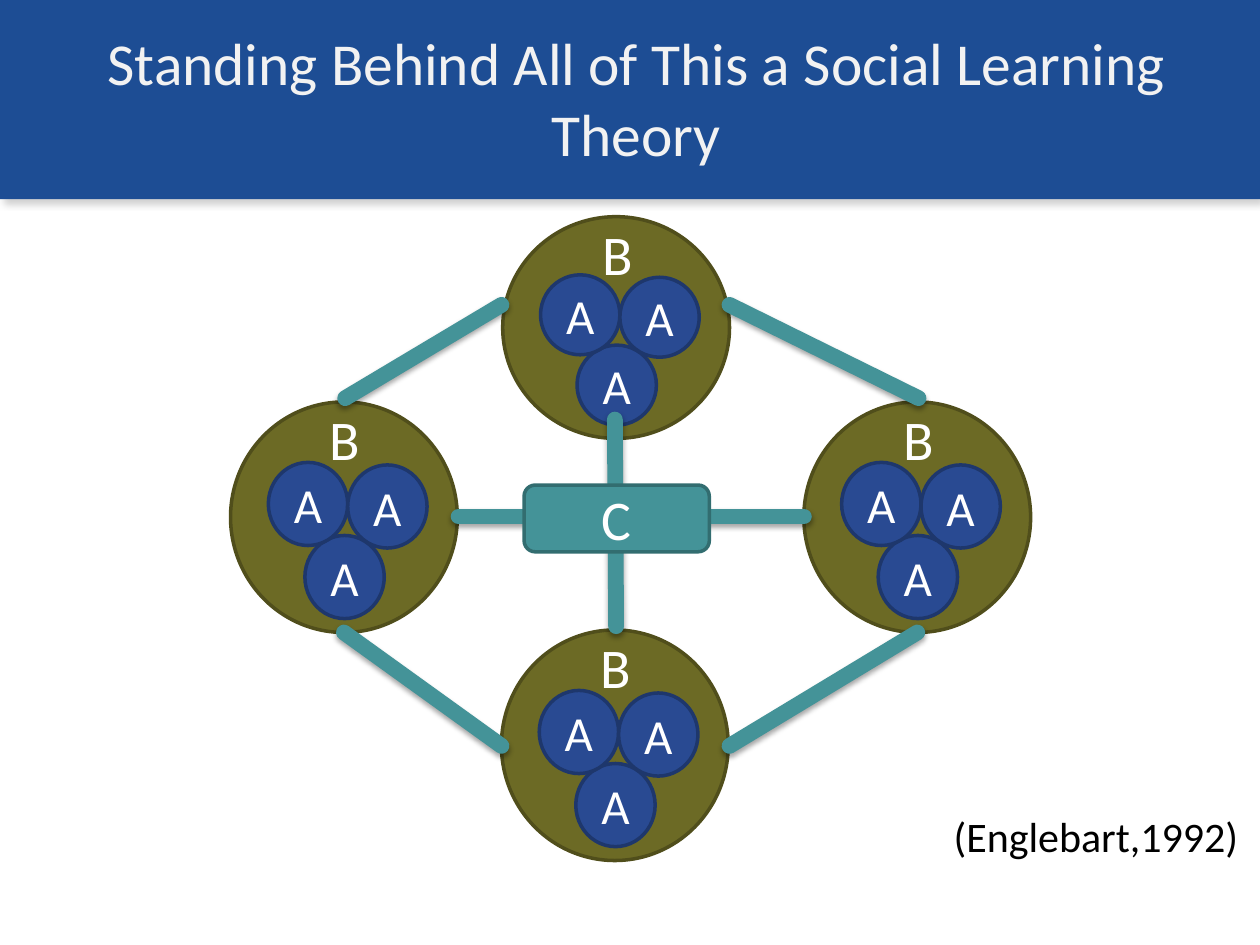
from lxml.etree import SubElement
from pptx import Presentation
from pptx.dml.color import RGBColor
from pptx.enum.shapes import MSO_CONNECTOR, MSO_SHAPE
from pptx.enum.text import MSO_ANCHOR, MSO_AUTO_SIZE, PP_ALIGN
from pptx.oxml.ns import qn
from pptx.util import Inches, Pt

FONT = "Calibri"
WHITE, BLACK, TITLE_GREY = "FFFFFF", "000000", "F2F2F2"
BANNER_BLUE = "1D4D94"
OLIVE, OLIVE_EDGE = "6C6A25", "504E1B"
BLUE, BLUE_EDGE = "294A92", "1E376C"
TEAL, TEAL_EDGE = "449398", "326D70"

CLUSTER_WIDTH, CLUSTER_HEIGHT = 1.8, 1.83
MEMBER_WIDTH, MEMBER_HEIGHT = 0.63, 0.66
MEMBER_OFFSETS = [(0.59, 1.06), (0.3, 0.48), (0.93, 0.5)]
CLUSTERS = [
    (3.99, 1.72, 1.76),
    (6.38, 3.19, CLUSTER_HEIGHT),
    (1.83, 3.19, CLUSTER_HEIGHT),
    (3.98, 5, CLUSTER_HEIGHT),
]
LINKS = [
    (5.79, 2.42, 7.29, 3.16),
    (3.98, 2.42, 2.74, 3.16),
    (2.73, 5.02, 3.98, 5.92),
    (7.28, 5.02, 5.79, 5.92),
    (4.88, 3.33, 4.89, 4.97),
    (3.64, 4.1, 6.38, 4.1),
]


def color(hex_value):
    """Turn a hex string into a colour."""
    return RGBColor.from_string(hex_value)


def inches(*lengths):
    """Turn plain numbers into lengths."""
    return [Inches(length) for length in lengths]


def add_shadow(element, blur, distance, angle, opacity):
    """Give a shape or connector a soft black outer shadow."""
    effects = SubElement(element.spPr, qn("a:effectLst"))
    shadow = SubElement(
        effects, qn("a:outerShdw"), blurRad=str(Pt(blur)), dist=str(Pt(distance)),
        dir=str(angle * 60000), rotWithShape="0",
    )
    black = SubElement(shadow, qn("a:srgbClr"), val=BLACK)
    SubElement(black, qn("a:alpha"), val=str(opacity * 1000))


def write(frame, text, size, hex_value, align=PP_ALIGN.LEFT):
    """Write one formatted run into a text frame."""
    paragraph = frame.paragraphs[0]
    paragraph.alignment = align
    run = paragraph.add_run()
    run.text = text
    run.font.name = FONT
    run.font.size = Pt(size)
    run.font.color.rgb = color(hex_value)


def add_node(slide, preset, box, fill, edge, label="", size=28):
    """Add a filled, outlined shape with a centred label."""
    node = slide.shapes.add_shape(preset, *inches(*box))
    node.shadow.inherit = False
    node.fill.solid()
    node.fill.fore_color.rgb = color(fill)
    node.line.color.rgb = color(edge)
    node.line.width = Pt(2)
    if label:
        node.text_frame.vertical_anchor = MSO_ANCHOR.MIDDLE
        write(node.text_frame, label, size, WHITE, PP_ALIGN.CENTER)


def add_label(slide, box, text, size, hex_value):
    """Add an unwrapped text box."""
    frame = slide.shapes.add_textbox(*inches(*box)).text_frame
    frame.word_wrap = False
    write(frame, text, size, hex_value)


def add_cluster(slide, left, top, height):
    """Add a B circle holding three A circles."""
    scale = height / CLUSTER_HEIGHT
    add_node(slide, MSO_SHAPE.OVAL, (left, top, CLUSTER_WIDTH, height), OLIVE, OLIVE_EDGE)
    for across, down in MEMBER_OFFSETS:
        member_box = (left + across, top + down * scale, MEMBER_WIDTH, MEMBER_HEIGHT * scale)
        add_node(slide, MSO_SHAPE.OVAL, member_box, BLUE, BLUE_EDGE, "A")
    add_label(slide, (left + 0.69, top - 0.03, 0.45, 0.67 * scale), "B", 32, WHITE)


def add_link(slide, ends):
    """Add a thick round-ended line between clusters."""
    link = slide.shapes.add_connector(MSO_CONNECTOR.STRAIGHT, *inches(*ends))
    link.line.color.rgb = color(TEAL)
    link.line.width = Pt(9)
    link.line._get_or_add_ln().set("cap", "rnd")
    add_shadow(link._element, 3.1, 1.8, 90, 35)


def add_banner(slide):
    """Add the title band behind everything else."""
    banner = slide.shapes.add_shape(MSO_SHAPE.RECTANGLE, *inches(0, 0, 10, 1.58))
    banner.fill.solid()
    banner.fill.fore_color.rgb = color(BANNER_BLUE)
    banner.line.fill.background()
    add_shadow(banner._element, 4.5, 3, 45, 18)
    slide.shapes._spTree.insert(2, banner._element)


def set_title(slide, text):
    """Place and write the slide title."""
    title = slide.shapes.title
    title.left, title.top, title.width, title.height = inches(0.29, 0.14, 9.52, 1.25)
    frame = title.text_frame
    frame.word_wrap = True
    frame.auto_size = MSO_AUTO_SIZE.NONE
    frame.vertical_anchor = MSO_ANCHOR.BOTTOM
    write(frame, text, 34, TITLE_GREY, PP_ALIGN.CENTER)


def main():
    """Build the social learning slide."""
    deck = Presentation()
    deck.slide_width, deck.slide_height = inches(10, 7.5)
    slide = deck.slides.add_slide(deck.slide_layouts[5])
    add_banner(slide)
    set_title(slide, "Standing Behind All of This a Social Learning Theory")
    for cluster in CLUSTERS:
        add_cluster(slide, *cluster)
    for ends in LINKS:
        add_link(slide, ends)
    hub_box = (4.16, 3.85, 1.47, 0.53)
    add_node(slide, MSO_SHAPE.ROUNDED_RECTANGLE, hub_box, TEAL, TEAL_EDGE, "C", 32)
    add_label(slide, (7.47, 6.38, 2.48, 0.5), "(Englebart,1992)", 24, BLACK)
    deck.save("out.pptx")


if __name__ == "__main__":
    main()
